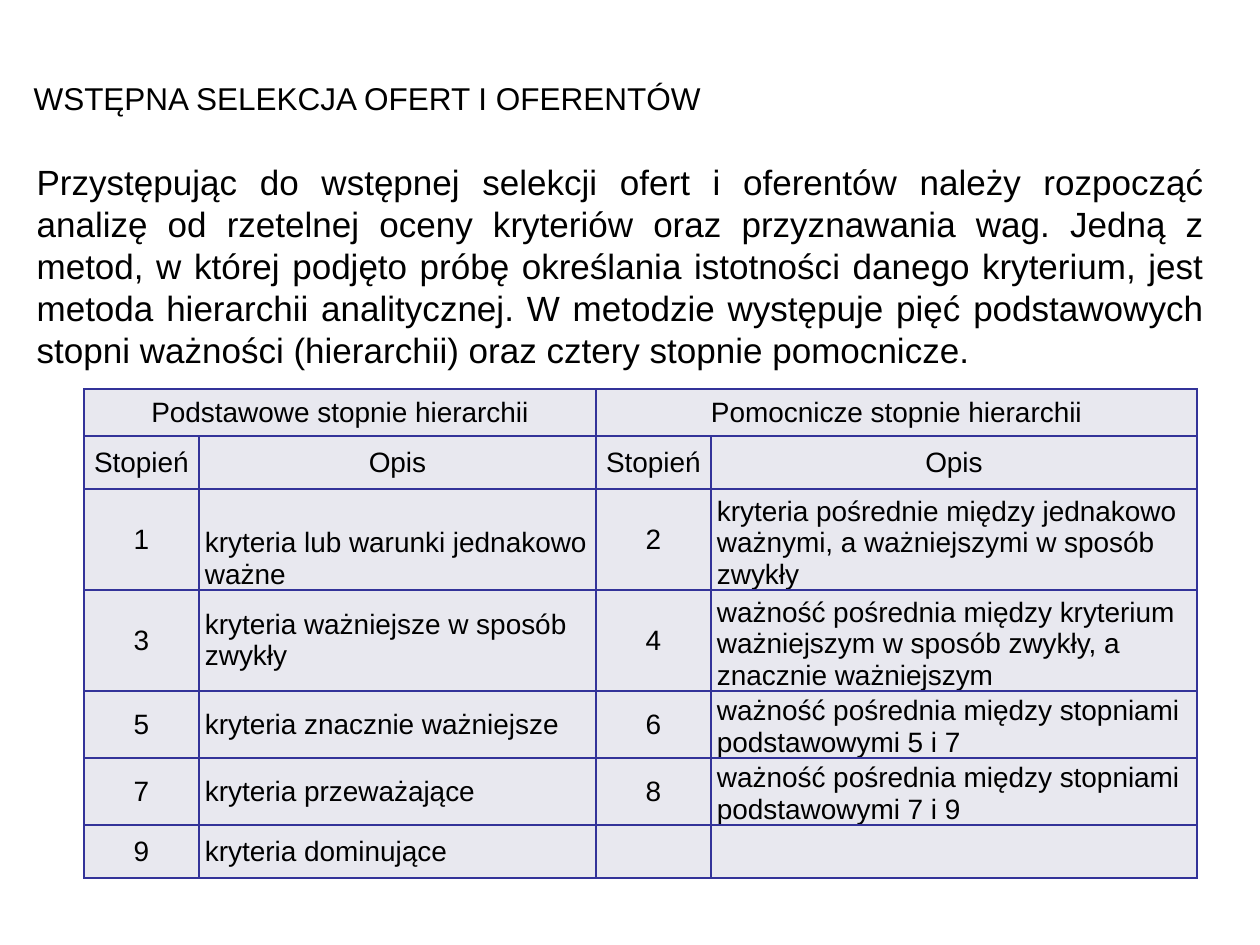
from dataclasses import dataclass

from lxml import etree
from pptx import Presentation
from pptx.dml.color import RGBColor
from pptx.enum.text import MSO_ANCHOR, MSO_AUTO_SIZE, PP_ALIGN
from pptx.oxml.ns import qn
from pptx.util import Emu, Inches, Pt

CENTER, LEFT, JUSTIFY = PP_ALIGN.CENTER, PP_ALIGN.LEFT, PP_ALIGN.JUSTIFY
TOP, MIDDLE, BOTTOM = MSO_ANCHOR.TOP, MSO_ANCHOR.MIDDLE, MSO_ANCHOR.BOTTOM
NO_FIT = MSO_AUTO_SIZE.NONE
SCALE = Inches(1) / 126
INK, LINE, FILL = "000000", "333399", "E8E8EF"
COLS = (115, 397, 115, 486)
ROWS = (47, 53, 101, 101, 67, 67, 53)
TITLE = "WSTĘPNA SELEKCJA OFERT I OFERENTÓW"
BODY = (
    "Przystępując do wstępnej selekcji ofert i oferentów należy rozpocząć "
    "analizę od rzetelnej oceny kryteriów oraz przyznawania wag. Jedną z "
    "metod, w której podjęto próbę określania istotności danego kryterium, "
    "jest metoda hierarchii analitycznej. W metodzie występuje pięć "
    "podstawowych stopni ważności (hierarchii) oraz cztery stopnie pomocnicze."
)


@dataclass
class Box:
    """A place on the slide in px."""
    x: int
    y: int
    w: int
    h: int


@dataclass
class Grade:
    """One row of degrees with their descriptions."""
    main: str
    about: str
    aid: str = ""
    note: str = ""
    anchor: MSO_ANCHOR = MIDDLE


GRADES = (
    Grade("1", "kryteria lub warunki jednakowo ważne", "2",
          "kryteria pośrednie między jednakowo ważnymi, a ważniejszymi "
          "w sposób zwykły", BOTTOM),
    Grade("3", "kryteria ważniejsze w sposób zwykły", "4",
          "ważność pośrednia między kryterium ważniejszym w sposób zwykły, "
          "a znacznie ważniejszym"),
    Grade("5", "kryteria znacznie ważniejsze", "6",
          "ważność pośrednia między stopniami podstawowymi 5 i 7"),
    Grade("7", "kryteria przeważające", "8",
          "ważność pośrednia między stopniami podstawowymi 7 i 9"),
    Grade("9", "kryteria dominujące"),
)


def px(size: int) -> Emu:
    """Turn px into EMU."""
    return Emu(round(size * SCALE))


def color(code: str) -> RGBColor:
    """Turn a hex string into a colour."""
    return RGBColor.from_string(code)


def write(frame, text: str, size: int, align: PP_ALIGN) -> None:
    """Set one paragraph of text and format its runs."""
    frame.text = text
    para = frame.paragraphs[0]
    para.alignment = align
    para.space_before = Pt(0)
    for run in para.runs:
        run.font.name = "Arial"
        run.font.size = Pt(size)
        run.font.color.rgb = color(INK)


def place(shape, box: Box, text: str, size: int,
          align: PP_ALIGN, anchor: MSO_ANCHOR) -> None:
    """Move a placeholder and fill it with text."""
    shape.left, shape.top = px(box.x), px(box.y)
    shape.width, shape.height = px(box.w), px(box.h)
    frame = shape.text_frame
    frame.word_wrap = True
    frame.auto_size = NO_FIT
    frame.vertical_anchor = anchor
    write(frame, text, size, align)


def indent(para, left: int) -> None:
    """Give a paragraph a left margin and no bullet."""
    props = para._p.get_or_add_pPr()
    props.set("marL", str(px(left)))
    props.set("indent", "0")
    etree.SubElement(props, qn("a:buNone"))


def frame_cell(cell) -> None:
    """Draw the four borders of a cell."""
    props = cell._tc.get_or_add_tcPr()
    for side in ("lnL", "lnR", "lnT", "lnB"):
        edge = etree.SubElement(props, qn(f"a:{side}"), w=str(Pt(1)))
        paint = etree.SubElement(edge, qn("a:solidFill"))
        etree.SubElement(paint, qn("a:srgbClr"), val=LINE)


def fill_cell(cell, text: str, align: PP_ALIGN, anchor: MSO_ANCHOR) -> None:
    """Style a cell and write its text."""
    frame_cell(cell)
    cell.fill.solid()
    cell.fill.fore_color.rgb = color(FILL)
    cell.margin_left = cell.margin_right = px(6)
    cell.margin_top = cell.margin_bottom = 0
    cell.vertical_anchor = anchor
    write(cell.text_frame, text, 16, align)


def add_grid(slide, box: Box) -> None:
    """Add the table of degrees."""
    table = slide.shapes.add_table(
        len(ROWS), len(COLS), px(box.x), px(box.y), px(box.w), px(box.h)
    ).table
    table.first_row = table.horz_banding = False
    for col, width in zip(table.columns, COLS):
        col.width = px(width)
    for row, height in zip(table.rows, ROWS):
        row.height = px(height)
    heads = (
        ("Podstawowe stopnie hierarchii", "", "Pomocnicze stopnie hierarchii", ""),
        ("Stopień", "Opis") * 2,
    )
    for r, texts in enumerate(heads):
        for c, text in enumerate(texts):
            fill_cell(table.cell(r, c), text, CENTER, MIDDLE)
    for c in (0, 2):
        table.cell(0, c).merge(table.cell(0, c + 1))
    for r, grade in enumerate(GRADES, len(heads)):
        fill_cell(table.cell(r, 0), grade.main, CENTER, MIDDLE)
        fill_cell(table.cell(r, 1), grade.about, LEFT, grade.anchor)
        fill_cell(table.cell(r, 2), grade.aid, CENTER, MIDDLE)
        fill_cell(table.cell(r, 3), grade.note, LEFT, BOTTOM)


def main() -> None:
    """Build and save the slide."""
    deck = Presentation()
    deck.slide_width, deck.slide_height = px(1260), px(945)
    slide = deck.slides.add_slide(deck.slide_layouts[1])
    body = slide.placeholders[1]
    place(body, Box(0, 155, 1217, 221), BODY, 20, JUSTIFY, MIDDLE)
    indent(body.text_frame.paragraphs[0], 24)
    place(slide.shapes.title, Box(21, 73, 987, 50), TITLE, 18, LEFT, TOP)
    add_grid(slide, Box(84, 389, sum(COLS), sum(ROWS)))
    deck.save("out.pptx")


if __name__ == "__main__":
    main()
